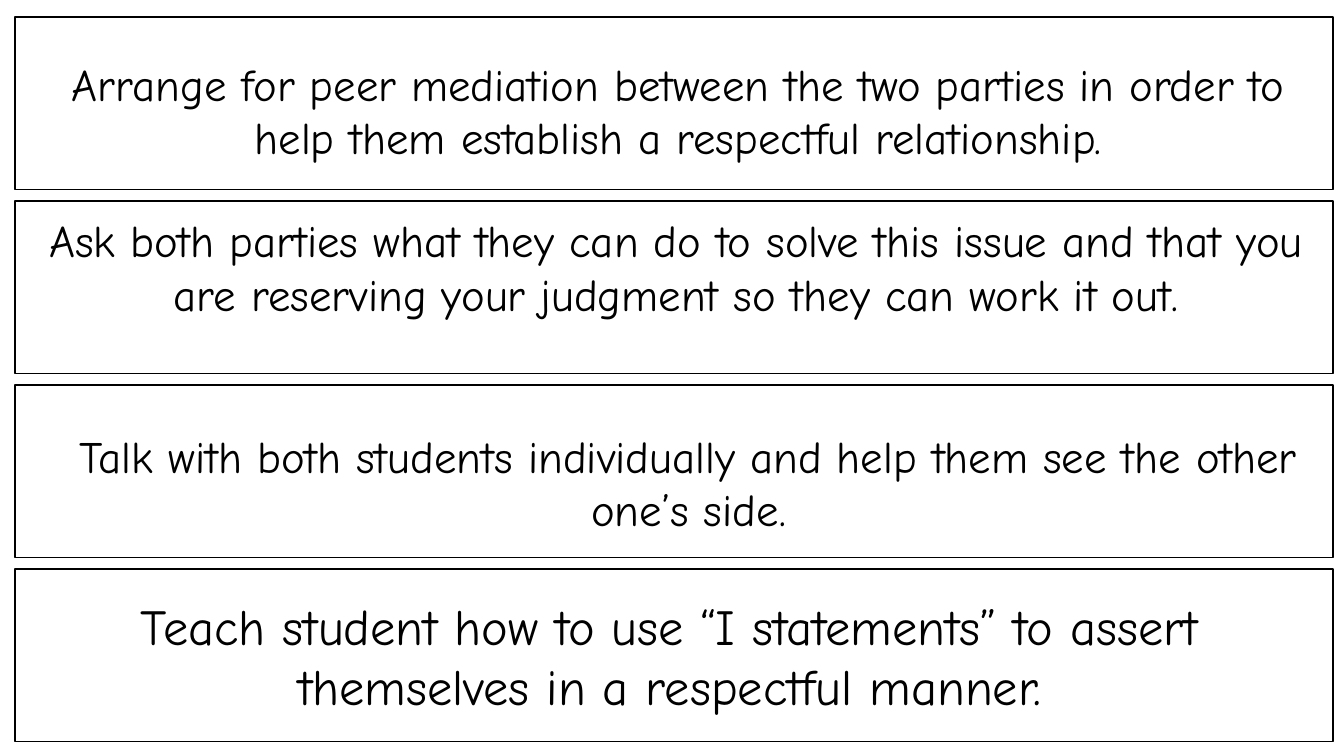
from typing import NamedTuple

from pptx import Presentation
from pptx.dml.color import RGBColor
from pptx.enum.shapes import MSO_SHAPE
from pptx.enum.text import MSO_ANCHOR, MSO_AUTO_SIZE, PP_ALIGN
from pptx.slide import Slide
from pptx.util import Inches, Pt

COLORS = {"paper": "FFFFFF", "ink": "000000"}
FONT = "Comic Neue"
CARD_LEFT, CARD_TOP, CARD_WIDTH, CARD_HEIGHT = 0.15, 0.17, 13.07, 1.71
CARD_PITCH = 1.825


class Strategy(NamedTuple):
    text: str
    left: float
    top: float
    width: float
    height: float
    size: int = 32


STRATEGIES = [
    Strategy("Arrange for peer mediation between the two parties in order to "
             "help them establish a respectful relationship.",
             0.39, 0.51, 12.68, 1.18),
    Strategy("Ask both parties what they can do to solve this issue and that you "
             "are reserving your judgment so they can work it out.",
             0.37, 2.06, 12.68, 1.72),
    Strategy("Talk with both students individually and help them see the other "
             "one’s side.",
             0.31, 4.2, 13.04, 1.18),
    Strategy("Teach student how to use “I statements” to assert "
             "themselves in a respectful manner.",
             0.3, 5.85, 12.68, 1.31, size=36),
]


def add_card(slide: Slide, row: int) -> None:
    sp = slide.shapes.add_shape(
        MSO_SHAPE.RECTANGLE, Inches(CARD_LEFT), Inches(CARD_TOP + row * CARD_PITCH),
        Inches(CARD_WIDTH), Inches(CARD_HEIGHT))
    sp.shadow.inherit = False
    sp.fill.solid()
    sp.fill.fore_color.rgb = RGBColor.from_string(COLORS["paper"])
    sp.line.color.rgb = RGBColor.from_string(COLORS["ink"])
    sp.line.width = Pt(1)


def add_strategy_text(slide: Slide, strategy: Strategy) -> None:
    sp = slide.shapes.add_textbox(
        Inches(strategy.left), Inches(strategy.top),
        Inches(strategy.width), Inches(strategy.height))
    tf = sp.text_frame
    tf.word_wrap = True
    tf.auto_size = MSO_AUTO_SIZE.NONE
    tf.vertical_anchor = MSO_ANCHOR.TOP
    p = tf.paragraphs[0]
    p.alignment = PP_ALIGN.CENTER
    r = p.add_run()
    r.text = strategy.text
    r.font.name = FONT
    r.font.size = Pt(strategy.size)
    r.font.color.rgb = RGBColor.from_string(COLORS["ink"])


def main() -> None:
    prs = Presentation()
    prs.slide_width, prs.slide_height = Inches(13.33), Inches(7.5)
    blank_layout = prs.slide_layouts[6]
    slide = prs.slides.add_slide(blank_layout)
    for row in range(len(STRATEGIES)):
        add_card(slide, row)
    for strategy in STRATEGIES:
        add_strategy_text(slide, strategy)
    prs.save("out.pptx")


if __name__ == "__main__":
    main()
